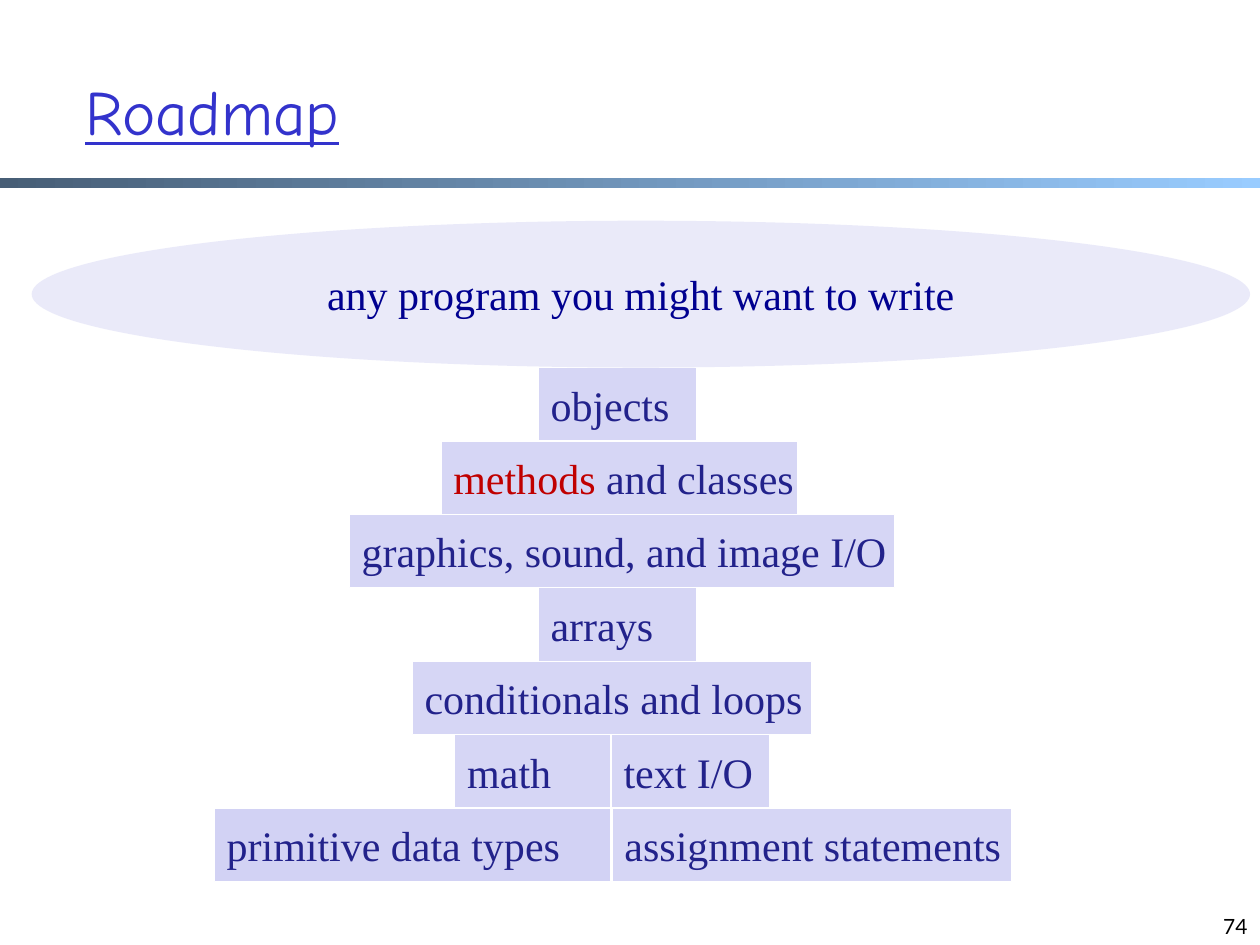
from dataclasses import dataclass

from lxml import etree
from pptx import Presentation
from pptx.dml.color import RGBColor
from pptx.enum.shapes import MSO_SHAPE
from pptx.enum.text import MSO_ANCHOR, PP_ALIGN
from pptx.oxml.ns import qn
from pptx.shapes.autoshape import Shape
from pptx.slide import Slide
from pptx.util import Cm, Pt

RECT, OVAL = MSO_SHAPE.RECTANGLE, MSO_SHAPE.OVAL
MIDDLE, BOTTOM = MSO_ANCHOR.MIDDLE, MSO_ANCHOR.BOTTOM
LEFT, CENTER, RIGHT = PP_ALIGN.LEFT, PP_ALIGN.CENTER, PP_ALIGN.RIGHT

WHITE = RGBColor(0xFF, 0xFF, 0xFF)
BLACK = RGBColor(0x00, 0x00, 0x00)
SLATE = RGBColor(0x47, 0x5E, 0x76)
SKY = RGBColor(0x99, 0xCC, 0xFF)
BLUE = RGBColor(0x33, 0x33, 0xCC)
NAVY = RGBColor(0x00, 0x00, 0x90)
INDIGO = RGBColor(0x22, 0x22, 0x8B)
RED = RGBColor(0xC0, 0x00, 0x00)
LILAC = RGBColor(0xD6, 0xD6, 0xF5)
MAUVE = RGBColor(0xD2, 0xD2, 0xF4)

SERIF, COMIC, SANS = "Times New Roman", "Comic Neue", "Lato"
TOP, STEP = 7.41, 1.48  # first row of bricks and row height, in cm


@dataclass
class Run:
    text: str
    color: RGBColor = INDIGO
    size: int = 24
    font: str = SERIF
    under: bool = False


@dataclass
class Brick:
    """A topic in the pyramid; left and width are in cm."""
    row: int
    left: float
    width: float
    runs: list[Run]
    fill: RGBColor = LILAC


BRICKS = [
    Brick(0, 10.85, 3.2, [Run("objects")]),
    Brick(1, 8.89, 7.19, [Run("methods", RED), Run(" and classes")]),
    Brick(2, 7.04, 11, [Run("graphics, sound, and image I/O")]),
    Brick(3, 10.85, 3.2, [Run("arrays")]),
    Brick(4, 8.31, 8.05, [Run("conditionals and loops")]),
    Brick(5, 9.17, 3.17, [Run("math")]),
    Brick(5, 12.32, 3.2, [Run("text I/O")]),
    Brick(6, 12.34, 8.05, [Run("assignment statements")]),
    Brick(6, 4.32, 8, [Run("primitive data types")], MAUVE),
]


def write(shape: Shape, runs: list[Run], align: PP_ALIGN = LEFT,
          anchor: MSO_ANCHOR = MIDDLE, wrap: bool = False) -> None:
    frame = shape.text_frame
    frame.word_wrap = wrap
    frame.vertical_anchor = anchor
    para = frame.paragraphs[0]
    para.alignment = align
    for item in runs:
        run = para.add_run()
        run.text = item.text
        run.font.name = item.font
        run.font.size = Pt(item.size)
        run.font.color.rgb = item.color
        if item.under:
            run.font.underline = True


def add_form(slide: Slide, kind: MSO_SHAPE, left: float, top: float,
             width: float, height: float) -> Shape:
    """Add a preset shape without shadow or line; lengths are in cm."""
    shape = slide.shapes.add_shape(kind, Cm(left), Cm(top), Cm(width), Cm(height))
    shape.shadow.inherit = False
    shape.line.fill.background()
    return shape


def add_label(slide: Slide, left: float, top: float, width: float,
              height: float, run: Run, align: PP_ALIGN, anchor: MSO_ANCHOR) -> None:
    box = slide.shapes.add_textbox(Cm(left), Cm(top), Cm(width), Cm(height))
    write(box, [run], align, anchor, wrap=True)


def add_rule(slide: Slide) -> None:
    rule = add_form(slide, RECT, 0, 3.58, 25.4, 0.21)
    rule.fill.gradient()
    rule.fill.gradient_angle = 0
    for stop, color in zip(rule.fill.gradient_stops, (SLATE, SKY)):
        stop.color.rgb = color


def add_brick(slide: Slide, brick: Brick) -> None:
    shape = add_form(slide, RECT, brick.left, TOP + brick.row * STEP,
                     brick.width, STEP)
    shape.fill.solid()
    shape.fill.fore_color.rgb = brick.fill
    shape.line.color.rgb = WHITE
    shape.line.width = Pt(0.75)
    write(shape, brick.runs)


def add_goal(slide: Slide) -> None:
    """Add the half-transparent ellipse on top of the pyramid."""
    goal = add_form(slide, OVAL, 0.64, 4.45, 24.56, 2.96)
    goal.fill.solid()
    goal.fill.fore_color.rgb = LILAC
    color = goal.fill._xPr.find(qn("a:solidFill"))[0]
    etree.SubElement(color, qn("a:alpha"), val="50000")
    write(goal, [Run("any program you might want to write", NAVY)], CENTER)


def main() -> None:
    deck = Presentation()
    deck.slide_width, deck.slide_height = Cm(25.4), Cm(19.05)
    slide = deck.slides.add_slide(deck.slide_layouts[6])
    add_rule(slide)
    add_label(slide, 1.47, 0.64, 21.59, 3.18,
              Run("Roadmap", BLUE, 36, COMIC, True), LEFT, MIDDLE)
    add_label(slide, 19.48, 17.78, 5.92, 1.27,
              Run("74", BLACK, 12, SANS), RIGHT, BOTTOM)
    for brick in BRICKS:
        add_brick(slide, brick)
    add_goal(slide)
    deck.save("out.pptx")


if __name__ == "__main__":
    main()
